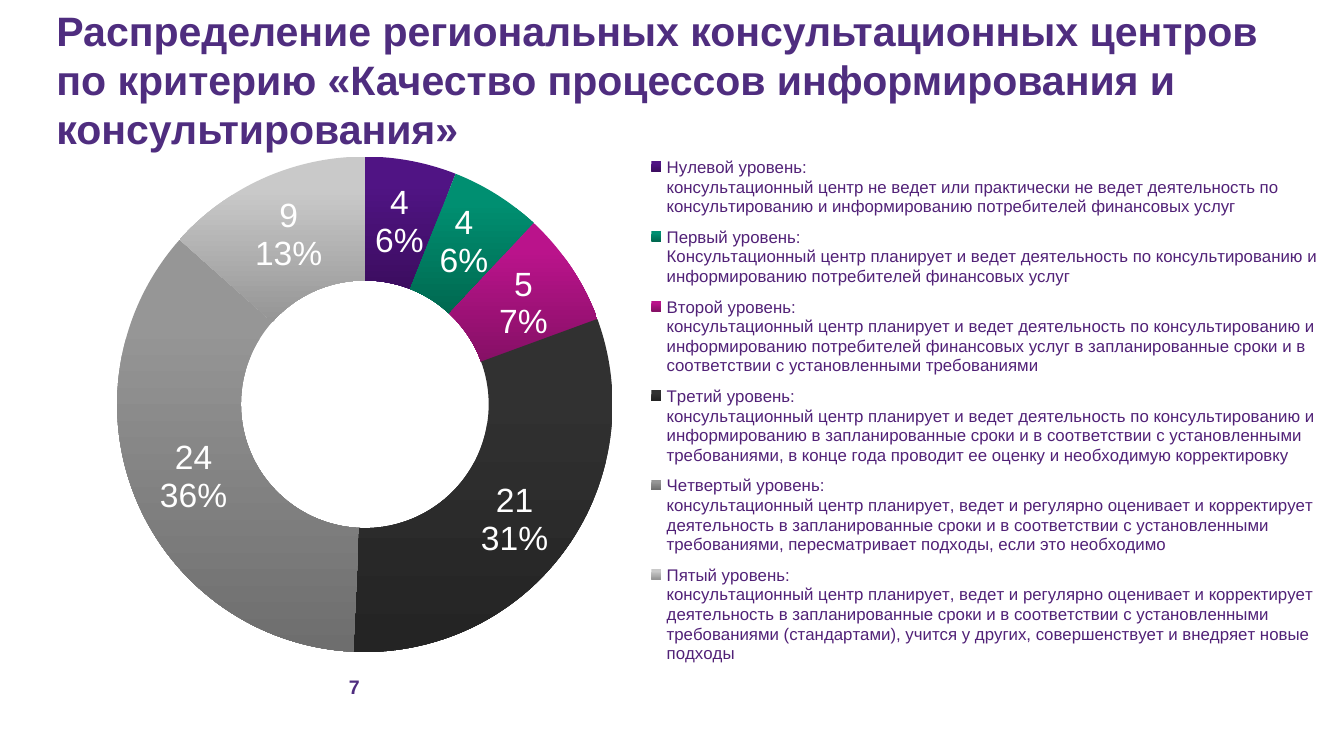
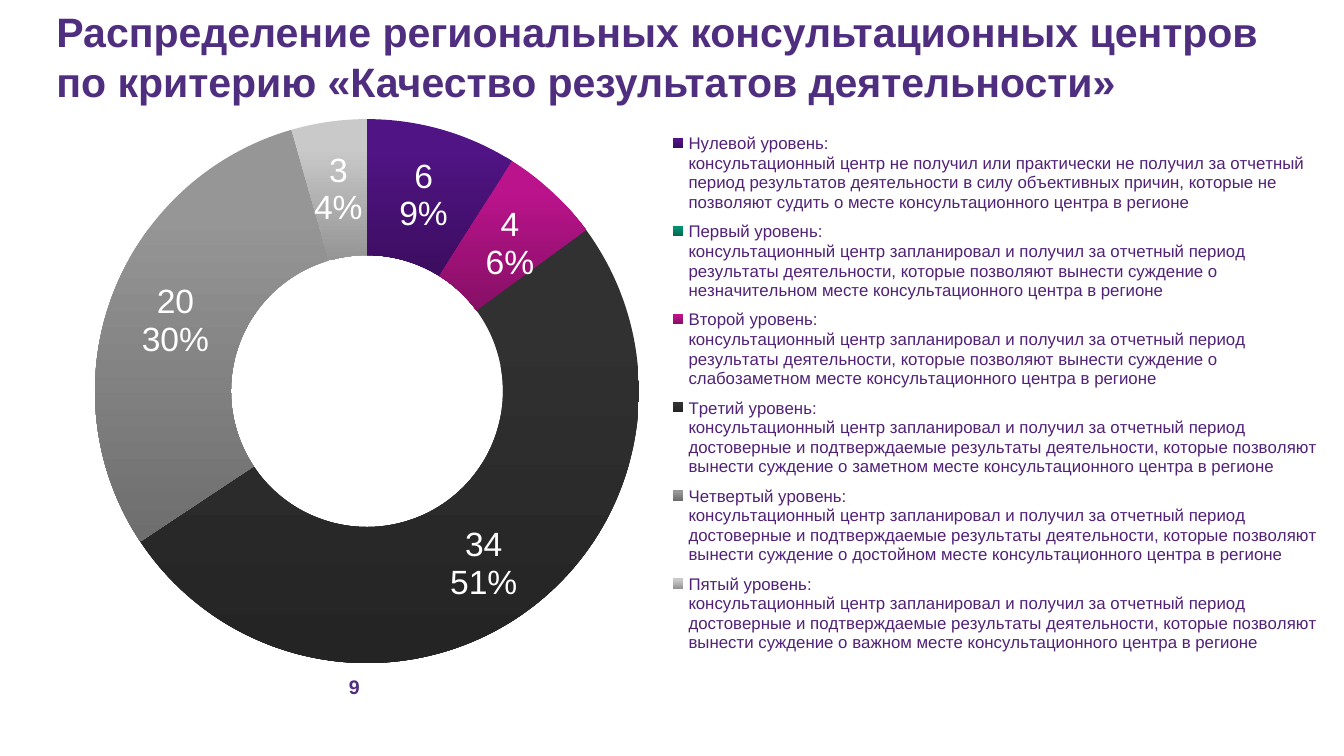
from copy import deepcopy
from dataclasses import dataclass

from lxml import etree
from pptx import Presentation
from pptx.chart.data import CategoryChartData
from pptx.dml.color import RGBColor
from pptx.enum import chart as ch, text as tx
from pptx.oxml.ns import qn
from pptx.util import Inches, Pt


@dataclass(frozen=True)
class Theme:
    font: str = "Arial"
    title: str = "4F2D7F"
    legend: str = "512177"
    label: str = "FFFFFF"
    title_size: float = 22
    label_size: float = 18
    legend_size: float = 9
    page_size: float = 10.5
    # top and bottom colour of each level's ring segment
    levels: tuple = (
        ("501484", "3C0D60"), ("008F71", "006950"), ("BA138B", "861066"),
        ("313131", "242424"), ("969696", "6E6E6E"), ("C9C9C9", "959595"),
    )


THEME = Theme()

LEVELS = ["Нулевой", "Первый", "Второй", "Третий", "Четвертый", "Пятый"]

# labels moved off their default place, as fractions of the chart
LABEL_SHIFTS = {1: (0, -0.01), 2: (0.003, 0.003), 3: (0, 0.01)}

SLIDES = [
    {
        "title": "Распределение региональных консультационных центров по критерию "
                 "«Качество процессов информирования и консультирования»",
        "page": "7",
        "title_top": 0.04,
        "chart_at": (0.12, 1.07, 9.79, 3.99),
        "ring_at": (0.01, 0.024, 0.51, 0.924),
        "legend_at": (0.473, 0.006, 0.525, 0.985),
        "centres": [4, 4, 5, 21, 24, 9],
        "meanings": [
            "консультационный центр не ведет или практически не ведет деятельность по "
            "консультированию и информированию потребителей финансовых услуг",
            "Консультационный центр планирует и ведет деятельность по консультированию и "
            "информированию потребителей финансовых услуг",
            "консультационный центр планирует и ведет деятельность по консультированию и "
            "информированию потребителей финансовых услуг в запланированные сроки и в "
            "соответствии с установленными требованиями",
            "консультационный центр планирует и ведет деятельность по консультированию и "
            "информированию в запланированные сроки и в соответствии с установленными "
            "требованиями, в конце года проводит ее оценку и необходимую корректировку",
            "консультационный центр планирует, ведет и регулярно оценивает и корректирует "
            "деятельность в запланированные сроки и в соответствии с установленными "
            "требованиями, пересматривает подходы, если это необходимо",
            "консультационный центр планирует, ведет и регулярно оценивает и корректирует "
            "деятельность в запланированные сроки и в соответствии с установленными "
            "требованиями (стандартами), учится у других, совершенствует и внедряет новые "
            "подходы",
        ],
    },
    {
        "title": "Распределение региональных консультационных центров по критерию "
                 "«Качество результатов деятельности»",
        "page": "9",
        "title_top": 0.05,
        "chart_at": (0.18, 0.87, 9.68, 4.11),
        "ring_at": (0.001, 0.004, 0.525, 0.985),
        "legend_at": (0.494, 0.014, 0.504, 0.975),
        "centres": [6, 0, 4, 34, 20, 3],
        "meanings": [
            "консультационный центр не получил или практически не получил за отчетный "
            "период результатов деятельности в силу объективных причин, которые не "
            "позволяют судить о месте консультационного центра в регионе",
            *(
                "консультационный центр запланировал и получил за отчетный период "
                f"{results}, которые позволяют вынести суждение о {rank} месте "
                "консультационного центра в регионе"
                for results, rank in [
                    ("результаты деятельности", "незначительном"),
                    ("результаты деятельности", "слабозаметном"),
                    ("достоверные и подтверждаемые результаты деятельности", "заметном"),
                    ("достоверные и подтверждаемые результаты деятельности", "достойном"),
                    ("достоверные и подтверждаемые результаты деятельности", "важном"),
                ]
            ),
        ],
    },
]


def style(font, size, color, bold=False):
    font.name, font.size, font.bold = THEME.font, Pt(size), bold
    font.color.rgb = RGBColor.from_string(color)


def write(frame, words, *, size, color, bold=True, align=tx.PP_ALIGN.LEFT,
          anchor=tx.MSO_ANCHOR.TOP, margin=0.0):
    frame.word_wrap = True
    frame.auto_size = tx.MSO_AUTO_SIZE.NONE
    frame.vertical_anchor = anchor
    frame.margin_left = frame.margin_right = Inches(margin)
    frame.margin_top = frame.margin_bottom = Inches(margin)
    line = frame.paragraphs[0]
    line.alignment = align
    run = line.add_run()
    run.text = words
    style(run.font, size, color, bold)


def place(part, index, settings):
    """Give a chart part a manual layout, in fractions of the chart."""
    for old in part.findall(qn("c:layout")):
        part.remove(old)
    layout = etree.Element(qn("c:layout"))
    part.insert(index, layout)
    manual = etree.SubElement(layout, qn("c:manualLayout"))
    for tag, value in settings:
        etree.SubElement(manual, qn(f"c:{tag}")).set("val", str(value))


def edges(box):
    return [("xMode", "edge"), ("yMode", "edge"), *zip("xywh", box)]


def label_segments(series, values):
    """Show count above percentage, with no label on empty segments."""
    labels = series.data_labels
    labels.show_value = labels.show_percentage = True
    style(labels.font, THEME.label_size, THEME.label)
    root = series.format and labels.font and labels._element
    separator = etree.Element(qn("c:separator"))
    separator.text = "\n"
    root.find(qn("c:showBubbleSize")).addnext(separator)
    shared = [part for part in root if part.tag != qn("c:showLeaderLines")]
    for position, (index, shift) in enumerate(LABEL_SHIFTS.items()):
        label = etree.Element(qn("c:dLbl"))
        etree.SubElement(label, qn("c:idx")).set("val", str(index))
        if values[index]:
            place(label, 1, zip("xy", shift))
            label.extend(deepcopy(shared))
        else:
            etree.SubElement(label, qn("c:delete")).set("val", "1")
        root.insert(position, label)


def add_ring(slide, content):
    data = CategoryChartData()
    data.categories = [f"{level} уровень:\n{meaning}"
                       for level, meaning in zip(LEVELS, content["meanings"])]
    data.add_series("Series 1", content["centres"])
    chart = slide.shapes.add_chart(
        ch.XL_CHART_TYPE.DOUGHNUT, *map(Inches, content["chart_at"]), data).chart
    chart.has_title = False
    style(chart.font, THEME.label_size, THEME.legend)

    chart.has_legend = True
    chart.legend.position = ch.XL_LEGEND_POSITION.RIGHT
    chart.legend.include_in_layout = False
    style(chart.legend.font, THEME.legend_size, THEME.legend)
    plot_area, legend = (chart.element.xpath(f".//c:{tag}")[0]
                         for tag in ("plotArea", "legend"))
    place(plot_area, 0, [("layoutTarget", "inner"), *edges(content["ring_at"])])
    place(legend, 1, edges(content["legend_at"]))

    ring = chart.plots[0]
    ring.vary_by_categories = True
    series = ring.series[0]
    for index, shades in enumerate(THEME.levels):
        segment = series.points[index].format
        segment.line.fill.background()
        segment.fill.gradient()
        segment.fill.gradient_angle = 270
        for stop, shade in zip(segment.fill.gradient_stops, shades):
            stop.color.rgb = RGBColor.from_string(shade)
        segment.fill.gradient_stops[0].position = 0.2
    label_segments(series, content["centres"])


def add_slide(deck, content):
    slide = deck.slides.add_slide(deck.slide_layouts[5])
    title = slide.shapes.title
    title.left, title.top = Inches(0.42), Inches(content["title_top"])
    title.width, title.height = Inches(9.19), Inches(0.94)
    write(title.text_frame, content["title"], size=THEME.title_size, color=THEME.title)
    add_ring(slide, content)
    page = slide.shapes.add_textbox(*map(Inches, (1.99, 4.97, 1.29, 0.28)))
    write(page.text_frame, content["page"], size=THEME.page_size, color=THEME.title,
          align=tx.PP_ALIGN.CENTER, anchor=tx.MSO_ANCHOR.MIDDLE, margin=0.05)


def main():
    deck = Presentation()
    deck.slide_width = Inches(10)
    deck.slide_height = deck.slide_width * 9 // 16
    for content in SLIDES:
        add_slide(deck, content)
    deck.save("out.pptx")


if __name__ == "__main__":
    main()
